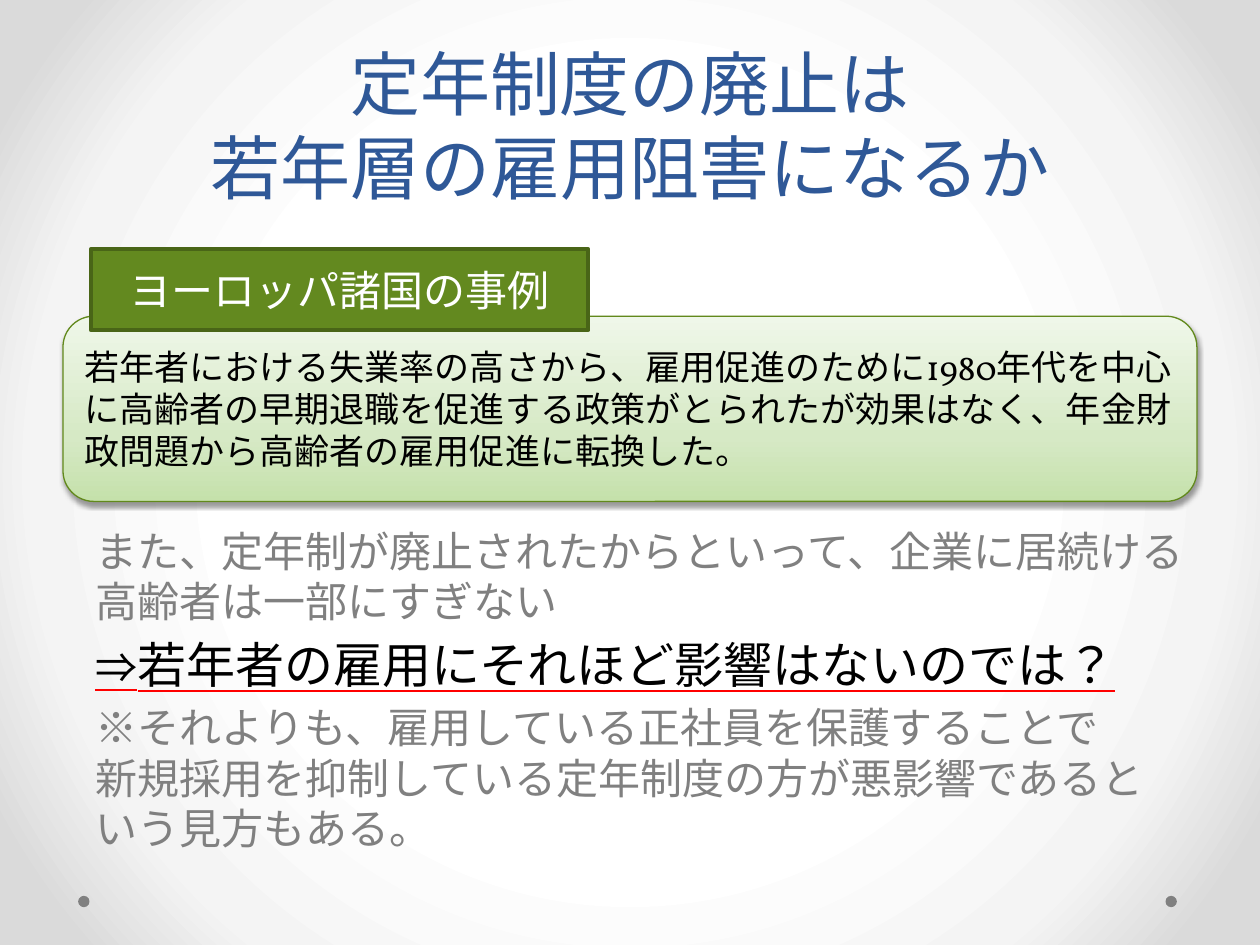
from dataclasses import dataclass

from lxml.etree import SubElement
from pptx import Presentation
from pptx.dml.color import RGBColor
from pptx.enum.lang import MSO_LANGUAGE_ID
from pptx.enum.shapes import MSO_SHAPE
from pptx.enum.text import MSO_ANCHOR, PP_ALIGN
from pptx.oxml import parse_xml
from pptx.oxml.ns import nsdecls, qn
from pptx.util import Inches, Pt


@dataclass(frozen=True)
class Theme:
    heading: str = "Vollkorn"
    body: str = "League Spartan"
    blue: str = "2F5897"
    grey: str = "808080"
    black: str = "000000"
    white: str = "FFFFFF"
    red: str = "FF0000"
    green: str = "63891F"
    tag_edge: str = "496517"
    panel_edge: str = "62891C"
    backdrop: tuple = ((50, "FFFFFF"), (76, "F4F4F4"), (92, "DADADA"))
    panel: tuple = ((0, "C5E1AB"), (35, "D6E9C5"), (100, "EFF7E9"))
    title_size: int = 40
    key_size: int = 28
    text_size: int = 24
    case_size: int = 20


THEME = Theme()
CELL = Inches(0.1)  # grid of 100 columns by 75 rows


def grid(*cells):
    """Left, top, width and height in grid cells, as lengths."""
    return [round(cell * CELL) for cell in cells]


def gradient(stops, direction):
    marks = "".join(
        f'<a:gs pos="{place * 1000}"><a:srgbClr val="{color}"/></a:gs>'
        for place, color in stops)
    return parse_xml(f'<a:gradFill {nsdecls("a")} rotWithShape="1">'
                     f"<a:gsLst>{marks}</a:gsLst>{direction}</a:gradFill>")


def write(paragraph, text, *, size, color, font=THEME.heading, underline=None):
    """Add text to a paragraph; a newline becomes a line break."""
    for number, line in enumerate(text.split("\n")):
        if number:
            paragraph.add_line_break()
        run = paragraph.add_run()
        run.text = line
        run.font.name = font
        run.font.size = Pt(size)
        run.font.color.rgb = RGBColor.from_string(color)
        run.font.language_id = MSO_LANGUAGE_ID.JAPANESE
        if underline:
            run.font.underline = True
            line_fill = parse_xml(
                f'<a:uFill {nsdecls("a")}><a:solidFill>'
                f'<a:srgbClr val="{underline}"/></a:solidFill></a:uFill>')
            run.font._element.find(qn("a:latin")).addprevious(line_fill)


def text_frame(shape, anchor, align):
    frame = shape.text_frame
    frame.word_wrap = True
    frame.vertical_anchor = anchor
    frame.paragraphs[0].alignment = align
    return frame


def add_plain_shape(slide, kind, box, *, fill=None, edge=None, width=0):
    shape = slide.shapes.add_shape(kind, *grid(*box))
    shape.shadow.inherit = False
    if fill:
        shape.fill.solid()
        shape.fill.fore_color.rgb = RGBColor.from_string(fill)
    if edge:
        shape.line.color.rgb = RGBColor.from_string(edge)
        shape.line.width = Pt(width)
    else:
        shape.line.fill.background()
    return shape


def add_backdrop(slide, box):
    """Round grey gradient with a dot in each lower corner."""
    slide.background.fill.solid()
    background = slide._element.find(".//" + qn("p:bgPr"))
    centre = ('<a:path path="circle"><a:fillToRect l="50000" t="50000" '
              'r="50000" b="50000"/></a:path>')
    background.replace(background[0], gradient(THEME.backdrop, centre))
    left, top, width, height = box
    dot = 0.9
    for dot_left in (left, left + width - dot):
        add_plain_shape(slide, MSO_SHAPE.OVAL,
                        (dot_left, top + height - dot, dot, dot),
                        fill=THEME.grey)


def add_title(slide, box):
    frame = text_frame(slide.shapes.add_textbox(*grid(*box)),
                       MSO_ANCHOR.BOTTOM, PP_ALIGN.CENTER)
    write(frame.paragraphs[0], "定年制度の廃止は\n若年層の雇用阻害になるか",
          size=THEME.title_size, color=THEME.blue)


def add_argument(slide, box):
    """Three paragraphs, the middle one underlined as the key point."""
    plain = dict(size=THEME.text_size, color=THEME.grey)
    key = dict(color=THEME.black, underline=THEME.red)
    paragraphs = [
        [("また、定年制が廃止されたからといって、企業に居続ける高齢者は一部にすぎない", plain)],
        [("⇒", dict(key, size=THEME.text_size)),
         ("若年者の雇用にそれほど影響はないのでは？", dict(key, size=THEME.key_size))],
        [("※それよりも、雇用している正社員を保護することで\n"
          "新規採用を抑制している定年制度の方が悪影響であるという見方もある。", plain)],
    ]
    frame = text_frame(slide.shapes.add_textbox(*grid(*box)),
                       MSO_ANCHOR.TOP, PP_ALIGN.LEFT)
    for number, parts in enumerate(paragraphs):
        paragraph = frame.add_paragraph() if number else frame.paragraphs[0]
        paragraph.space_before = Pt(THEME.text_size * 0.2)
        for text, style in parts:
            write(paragraph, text, font=THEME.body, **style)


def add_case(slide, box):
    """Green panel with a tag overlapping its upper edge."""
    left, top, width, height = box
    tag_height, overlap = 6.4, 1.1
    panel_top = top + tag_height - overlap

    # Panel
    panel = add_plain_shape(
        slide, MSO_SHAPE.ROUNDED_RECTANGLE,
        (left, panel_top, width, top + height - panel_top),
        edge=THEME.panel_edge, width=0.75)
    properties = panel._element.spPr
    properties.find(qn("a:prstGeom")).addnext(
        gradient(THEME.panel, '<a:lin ang="16200000" scaled="0"/>'))
    shadow = SubElement(properties.find(qn("a:effectLst")), qn("a:outerShdw"),
                        blurRad=str(Pt(3.1)), dist=str(Pt(1.6)), dir="5400000",
                        algn="ctr", rotWithShape="0")
    shade = SubElement(shadow, qn("a:srgbClr"), val=THEME.black)
    SubElement(shade, qn("a:alpha"), val="38000")
    frame = text_frame(panel, MSO_ANCHOR.MIDDLE, PP_ALIGN.LEFT)
    write(frame.paragraphs[0],
          "若年者における失業率の高さから、雇用促進のために1980年代を中心に"
          "高齢者の早期退職を促進する政策がとられたが効果はなく、"
          "年金財政問題から高齢者の雇用促進に転換した。",
          size=THEME.case_size, color=THEME.black)

    # Tag
    tag = add_plain_shape(slide, MSO_SHAPE.RECTANGLE,
                          (left + 2.2, top, 39.5, tag_height),
                          fill=THEME.green, edge=THEME.tag_edge, width=2.25)
    frame = text_frame(tag, MSO_ANCHOR.MIDDLE, PP_ALIGN.CENTER)
    write(frame.paragraphs[0], "ヨーロッパ諸国の事例",
          size=THEME.text_size, color=THEME.white)


def main():
    deck = Presentation()
    deck.slide_width, deck.slide_height = 100 * CELL, 75 * CELL
    slide = deck.slides.add_slide(deck.slide_layouts[6])
    add_backdrop(slide, (6.2, 0, 87.2, 72))
    add_title(slide, (5, 3.2, 90, 13.8))
    add_argument(slide, (6.6, 41.2, 88.4, 28.5))
    add_case(slide, (5, 19.8, 90, 20))
    deck.save("out.pptx")


if __name__ == "__main__":
    main()
